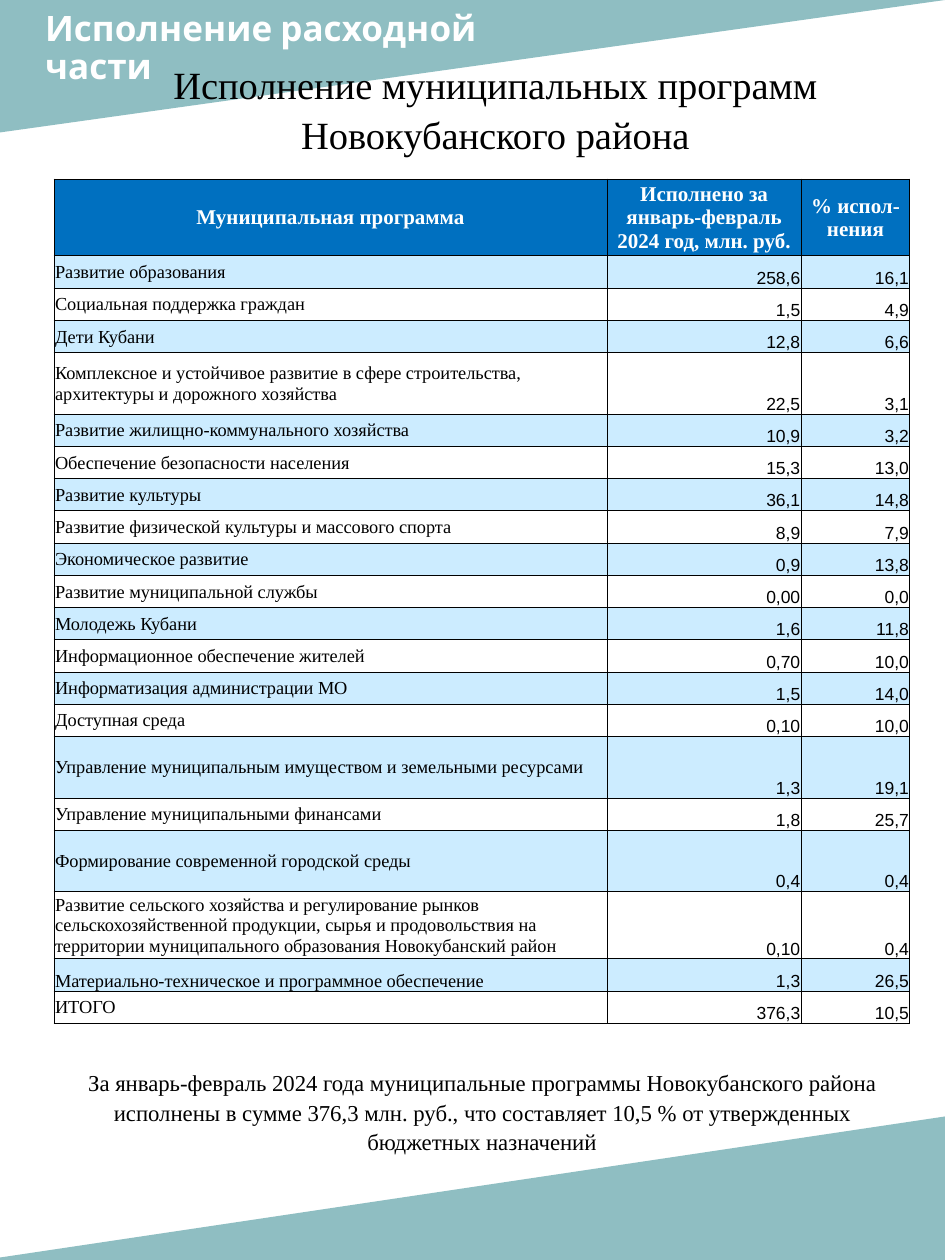
from dataclasses import dataclass

from lxml import etree
from pptx import Presentation
from pptx.dml.color import RGBColor
from pptx.enum.shapes import MSO_SHAPE
from pptx.enum.text import MSO_ANCHOR, MSO_AUTO_SIZE, PP_ALIGN
from pptx.oxml.ns import qn
from pptx.util import Cm, Pt

LEFT, MID, RIGHT = PP_ALIGN.LEFT, PP_ALIGN.CENTER, PP_ALIGN.RIGHT
TOP, CENTER, BOTTOM = MSO_ANCHOR.TOP, MSO_ANCHOR.MIDDLE, MSO_ANCHOR.BOTTOM
WEDGE = MSO_SHAPE.RIGHT_TRIANGLE
FIXED = MSO_AUTO_SIZE.NONE


@dataclass(frozen=True)
class Theme:
    teal: str = "519AA0"
    blue: str = "0070C0"
    pale: str = "CCECFF"
    white: str = "FFFFFF"
    black: str = "000000"
    serif: str = "Times New Roman"
    sans: str = "Arial"
    brand: str = "Cabin"
    title: float = 22
    banner: float = 20
    note: float = 13
    head: float = 12
    label: float = 10.5
    value: float = 10


T = Theme()
PAGE = (19.05, 25.4)
COLS = (11.15, 3.91, 2.19)
HEAD_H, ROW_H, TALL_H, RURAL_H = 1.53, 0.65, 1.24, 1.35

HEADS = ("Муниципальная программа", "Исполнено за январь-февраль 2024 год, млн. руб.",
         "% испол-нения")
# Program, amount spent, percent, row height
ROWS = [
    ("Развитие образования", "258,6", "16,1", ROW_H),
    ("Социальная поддержка граждан", "1,5", "4,9", ROW_H),
    ("Дети Кубани", "12,8", "6,6", ROW_H),
    ("Комплексное и устойчивое развитие в сфере строительства, "
     "архитектуры и дорожного хозяйства", "22,5", "3,1", TALL_H),
    ("Развитие жилищно-коммунального хозяйства", "10,9", "3,2", ROW_H),
    ("Обеспечение безопасности населения", "15,3", "13,0", ROW_H),
    ("Развитие культуры", "36,1", "14,8", ROW_H),
    ("Развитие физической культуры и массового спорта", "8,9", "7,9", ROW_H),
    ("Экономическое развитие", "0,9", "13,8", ROW_H),
    ("Развитие муниципальной службы", "0,00", "0,0", ROW_H),
    ("Молодежь Кубани", "1,6", "11,8", ROW_H),
    ("Информационное обеспечение жителей", "0,70", "10,0", ROW_H),
    ("Информатизация администрации МО", "1,5", "14,0", ROW_H),
    ("Доступная среда", "0,10", "10,0", ROW_H),
    ("Управление муниципальным имуществом и земельными ресурсами", "1,3", "19,1", TALL_H),
    ("Управление муниципальными финансами", "1,8", "25,7", ROW_H),
    ("Формирование современной городской среды", "0,4", "0,4", TALL_H),
    ("Развитие сельского хозяйства и регулирование рынков сельскохозяйственной продукции, "
     "сырья и продовольствия на территории муниципального образования Новокубанский район",
     "0,10", "0,4", RURAL_H),
    ("Материально-техническое и программное обеспечение", "1,3", "26,5", ROW_H),
    ("ИТОГО", "376,3", "10,5", ROW_H),
]
LOW = 19  # the row whose label sits at the bottom


def write(frame, text, font=T.serif, size=T.label, color=T.black, bold=False,
          align=LEFT, space=1.0):
    """Put text in a frame, one paragraph per line."""
    frame.word_wrap = True
    for i, line in enumerate(text.split("\n")):
        para = frame.add_paragraph() if i else frame.paragraphs[0]
        para.alignment, para.line_spacing = align, space
        run = para.add_run()
        run.text = line
        run.font.name, run.font.size, run.font.bold = font, Pt(size), bold
        run.font.color.rgb = RGBColor.from_string(color)


def place(shape, box):
    shape.left, shape.top, shape.width, shape.height = map(Cm, box)


def wedge(slide, box, flip):
    """Translucent corner triangle, turned and mirrored."""
    shape = slide.shapes.add_shape(WEDGE, *map(Cm, box))
    shape.shadow.inherit = False
    shape.rotation = 180
    shape.line.fill.background()
    shape.fill.solid()
    shape.fill.fore_color.rgb = RGBColor.from_string(T.teal)
    props = shape._element.spPr
    props.find(qn("a:xfrm")).set(flip, "1")
    tint = props.find(qn("a:solidFill"))[0]
    etree.SubElement(tint, qn("a:alpha")).set("val", "64000")


def block(slide, box, text, **form):
    shape = slide.shapes.add_textbox(*map(Cm, box))
    write(shape.text_frame, text, **form)


def title(slide, box, text):
    shape = slide.shapes.title
    place(shape, box)
    slide.shapes._spTree.append(shape._element)  # bring in front of the wedges
    frame = shape.text_frame
    frame.auto_size, frame.vertical_anchor = FIXED, TOP
    write(frame, text, size=T.title, align=MID, space=1.07)


def style(cell, fill, anchor):
    """Cell borders, fill, margins and anchor."""
    props = cell._tc.get_or_add_tcPr()
    for side in ("lnL", "lnR", "lnT", "lnB"):
        line = etree.SubElement(props, qn(f"a:{side}"), w=str(Pt(0.5)))
        paint = etree.SubElement(line, qn("a:solidFill"))
        etree.SubElement(paint, qn("a:srgbClr"), val=T.black)
    cell.fill.solid()
    cell.fill.fore_color.rgb = RGBColor.from_string(fill)
    cell.margin_left = cell.margin_right = cell.margin_top = Cm(0.02)
    cell.margin_bottom = 0
    cell.vertical_anchor = anchor


def grid(slide, left, top):
    """Table of programs with striped rows."""
    highs = [HEAD_H] + [row[-1] for row in ROWS]
    box = (left, top, sum(COLS), sum(highs))
    table = slide.shapes.add_table(len(highs), len(COLS), *map(Cm, box)).table
    table.horz_banding = False
    for col, wide in zip(table.columns, COLS):
        col.width = Cm(wide)
    for row, high in zip(table.rows, highs):
        row.height = Cm(high)

    # Header
    for cell, text in zip(table.rows[0].cells, HEADS):
        style(cell, T.blue, CENTER)
        write(cell.text_frame, text, size=T.head, color=T.white, bold=True, align=MID)

    # Body
    for r, (name, *nums, _) in enumerate(ROWS, 1):
        fill = T.pale if r % 2 else T.white
        first, *rest = table.rows[r].cells
        style(first, fill, BOTTOM if r == LOW else CENTER)
        write(first.text_frame, name)
        for cell, num in zip(rest, nums):
            style(cell, fill, BOTTOM)
            write(cell.text_frame, num, font=T.sans, size=T.value, align=RIGHT)


def main():
    deck = Presentation()
    deck.slide_width, deck.slide_height = map(Cm, PAGE)
    slide = deck.slides.add_slide(deck.slide_layouts[5])

    # Corner wedges
    wedge(slide, (0, 0, PAGE[0], 2.67), "flipH")
    wedge(slide, (-0.33, 22.5, 19.43, 2.9), "flipV")

    # Headings
    block(slide, (0.66, 0.1, 12.37, 1.96), "Исполнение расходной\nчасти",
          font=T.brand, size=T.banner, color=T.white, bold=True, space=0.9)
    title(slide, (1.63, 1.04, 16.71, 2.11),
          "Исполнение муниципальных программ Новокубанского района")

    # Summary and table
    block(slide, (1.09, 21.39, 17.25, 1.93),
          "За январь-февраль 2024 года муниципальные программы Новокубанского района "
          "исполнены в сумме 376,3 млн. руб., что составляет 10,5 % от утвержденных "
          "бюджетных назначений", size=T.note, align=MID, space=1.07)
    grid(slide, 1.09, 3.61)
    deck.save("out.pptx")


if __name__ == "__main__":
    main()
